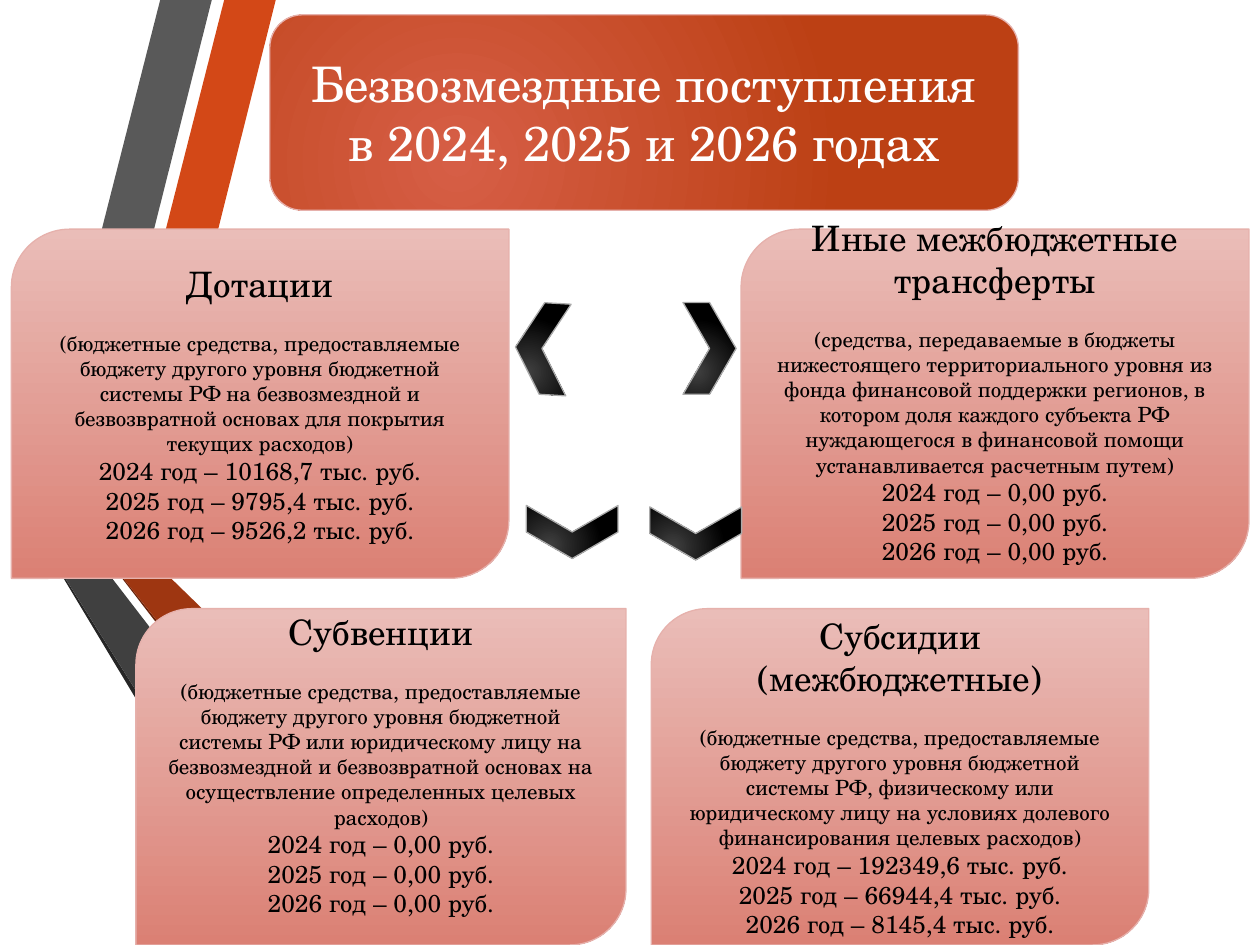
"""Build the slide on gratuitous budget receipts for 2024, 2025 and 2026."""
from lxml import etree
from pptx import Presentation
from pptx.dml.color import RGBColor
from pptx.enum.shapes import MSO_SHAPE as Shape
from pptx.enum.text import MSO_ANCHOR as Anchor, MSO_AUTO_SIZE as AutoSize, PP_ALIGN as Align
from pptx.oxml.ns import qn
from pptx.util import Cm, Pt

FONT = "TeX Gyre Schola"
COLORS = {
    "orange": "D34817", "grey": "595959", "grey edge": "262626",
    "rust edge": "69240C", "rust": "9E3611", "dark grey": "404040",
    "title start": "D65E46", "title end": "BC4014",
    "card start": "EABDB8", "card end": "DB8074", "pink line": "E6B1AC",
    "arrow start": "404040", "arrow end": "000000", "arrow line": "ABABAB",
    "white": "FFFFFF", "black": "000000",
}


def color(name):
    return RGBColor.from_string(COLORS[name])


def add_gradient_shape(kind, place, name, line, radial):
    box = page.shapes.add_shape(kind, *[Cm(length) for length in place])
    box.shadow.inherit = False
    box.line.color.rgb = color(line)
    box.line.width = Pt(0.75)
    box.fill.gradient()
    box.fill.gradient_angle = 270
    for stop, end in zip(box.fill.gradient_stops, ("start", "end")):
        stop.color.rgb = color(f"{name} {end}")
    if radial:
        linear = box._element.spPr.find(qn("a:gradFill")).find(qn("a:lin"))
        circle = etree.Element(qn("a:path"), path="circle")
        etree.SubElement(circle, qn("a:fillToRect"), l="50000", t="100000", r="100000", b="50000")
        linear.getparent().replace(linear, circle)
    return box


deck = Presentation()
deck.slide_width, deck.slide_height = Cm(25.4), Cm(19.05)
page = deck.slides.add_slide(deck.slide_layouts[5])

ribbons = [
    ("orange", [(178, 1077), (279, 1102), (556, 0), (452, 0)]),
    ("grey", [(427, 0), (323, 0), (56, 1049), (157, 1072)]),
    ("grey edge", [(58, 1049), (572, 1905), (597, 1905)]),
    ("rust edge", [(838, 1905), (180, 1080), (815, 1905)]),
    ("rust", [(178, 1077), (180, 1080), (838, 1905), (1105, 1905), (279, 1102)]),
    ("dark grey", [(795, 1905), (173, 1097), (157, 1072), (56, 1049), (58, 1049), (597, 1905)]),
]
for name, points in ribbons:
    builder = page.shapes.build_freeform(*points[0], scale=Cm(0.01))
    builder.add_line_segments(points[1:], close=True)
    ribbon = builder.convert_to_shape()
    ribbon.shadow.inherit = False
    ribbon.fill.solid()
    ribbon.fill.fore_color.rgb = color(name)
    ribbon.line.fill.background()

banner = add_gradient_shape(Shape.ROUNDED_RECTANGLE, (5.44, 0.3, 15.09, 3.94), "title", "pink line", True)
title = page.shapes.title
title.left, title.top, title.width, title.height = banner.left, banner.top, banner.width, banner.height
page.shapes._spTree.append(title._element)
title.text_frame.text = "Безвозмездные поступления\nв 2024, 2025 и 2026 годах"
title.text_frame.auto_size = AutoSize.NONE
title.text_frame.vertical_anchor = Anchor.MIDDLE
for para in title.text_frame.paragraphs:
    para.alignment = Align.CENTER
    para.font.name, para.font.size = FONT, Pt(28)
    para.font.color.rgb = color("white")

cards = [
    ((0.23, 4.62, 10.03, 7.04), 0.13, "Дотации",
     "(бюджетные средства, предоставляемые бюджету другого уровня бюджетной системы РФ "
     "на безвозмездной и безвозвратной основах для покрытия текущих расходов)",
     ("10168,7 тыс. руб.", "9795,4 тыс. руб.", "9526,2 тыс. руб.")),
    ((2.74, 12.27, 9.88, 6.78), 0.63, "Субвенции",
     "(бюджетные средства, предоставляемые бюджету другого уровня бюджетной системы РФ "
     "или юридическому лицу на безвозмездной и безвозвратной основах на осуществление "
     "определенных целевых расходов)",
     ("0,00 руб.",) * 3),
    ((13.13, 12.27, 10.03, 6.78), 0.13, "Субсидии (межбюджетные)",
     "(бюджетные средства, предоставляемые бюджету другого уровня бюджетной системы РФ, "
     "физическому или юридическому лицу на условиях долевого финансирования целевых расходов)",
     ("192349,6 тыс. руб.", "66944,4 тыс. руб.", "8145,4 тыс. руб.")),
    ((14.94, 4.62, 10.24, 7.04), 0.63, "Иные межбюджетные трансферты",
     "(средства, передаваемые в бюджеты нижестоящего территориального уровня из фонда "
     "финансовой поддержки регионов, в котором доля каждого субъекта РФ нуждающегося "
     "в финансовой помощи устанавливается расчетным путем)",
     ("0,00 руб.",) * 3),
]
for place, bottom, heading, meaning, amounts in cards:
    card = add_gradient_shape(Shape.ROUND_2_DIAG_RECTANGLE, place, "card", "pink line", False)
    frame = card.text_frame
    frame.word_wrap = True
    frame.vertical_anchor = Anchor.MIDDLE
    frame.margin_bottom = Cm(bottom)
    years = [f"{year} год – {amount}" for year, amount in zip((2024, 2025, 2026), amounts)]
    frame.text = "\n".join([heading, meaning, *years])
    for para, size in zip(frame.paragraphs, (20, 12, 14, 14, 14)):
        para.alignment = Align.CENTER
        para.font.name, para.font.size = FONT, Pt(size)
        para.font.color.rgb = color("black")
    frame.paragraphs[0].space_after = Pt(14.4)

for left, top, turn in [(13.77, 6.1, 0), (13.49, 9.83, 90), (11, 9.8, 90), (10.39, 6.1, 183.4)]:
    arrow = add_gradient_shape(Shape.CHEVRON, (left, top, 1.07, 1.85), "arrow", "arrow line", True)
    arrow.rotation = turn

deck.save("out.pptx")
